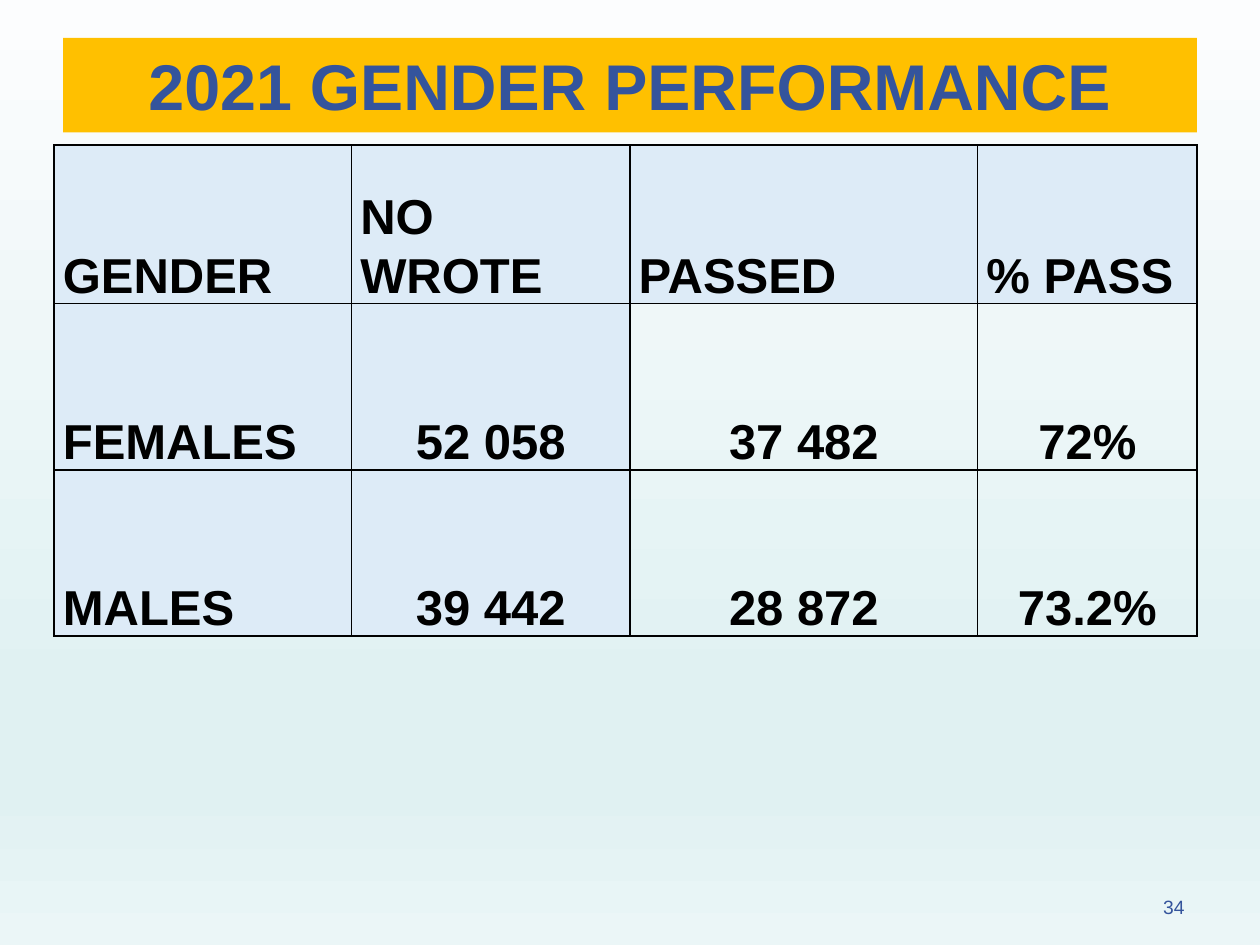
from lxml.etree import SubElement
from pptx import Presentation
from pptx.dml.color import RGBColor
from pptx.enum.text import MSO_ANCHOR as Anchor, MSO_AUTO_SIZE as AutoSize, PP_ALIGN as Align
from pptx.oxml.ns import qn
from pptx.util import Inches, Pt

FONT = "Arial"
BLUE, GOLD, PALE, BLACK = "34549C", "FFC000", "DDEBF7", "000000"
BACKGROUND = [(0, "FCFDFE"), (74, "E0F1F2"), (83, "E0F1F2"), (100, "EBF6F7")]
ROWS = [
    ["GENDER", "NO WROTE", "PASSED", "% PASS"],
    ["FEMALES", "52 058", "37 482", "72%"],
    ["MALES", "39 442", "28 872", "73.2%"],
]
COLUMN_WIDTHS = [2.36, 2.21, 2.76, 1.74]
ROW_HEIGHTS = [1.26, 1.32, 1.32]


def color(value):
    return RGBColor.from_string(value)


def place(shape, left, top, width, height):
    shape.left, shape.top = Inches(left), Inches(top)
    shape.width, shape.height = Inches(width), Inches(height)


def add_borders(cell, line_color, points):
    """Outline a cell; call before filling it, as lines precede the fill in XML."""
    properties = cell._tc.get_or_add_tcPr()
    for side in ("lnL", "lnR", "lnT", "lnB"):
        line = SubElement(properties, qn(f"a:{side}"), w=str(Pt(points)))
        fill = SubElement(line, qn("a:solidFill"))
        SubElement(fill, qn("a:srgbClr"), val=line_color)


class SlideBuilder:
    def __init__(self, page, font):
        self.page = page
        self.font = font

    def background(self, stops):
        fill = self.page.background.fill
        fill.gradient()
        fill.gradient_angle = 270
        stop_list = self.page._element.find(".//" + qn("a:gsLst"))
        stop_list.clear()
        for percent, value in stops:
            stop = SubElement(stop_list, qn("a:gs"), pos=str(percent * 1000))
            SubElement(stop, qn("a:srgbClr"), val=value)

    def add_text(self, frame, text, size, text_color, bold=False, align=Align.LEFT, spacing=1.0):
        para = frame.paragraphs[0]
        para.alignment = align
        para.line_spacing = spacing
        span = para.add_run()
        span.text = text
        span.font.name = self.font
        span.font.size = Pt(size)
        span.font.bold = bold
        span.font.color.rgb = color(text_color)

    def title(self, text, area):
        box = self.page.shapes.title
        place(box, *area)
        box.fill.solid()
        box.fill.fore_color.rgb = color(GOLD)
        frame = box.text_frame
        frame.auto_size = AutoSize.NONE
        frame.vertical_anchor = Anchor.MIDDLE
        self.add_text(frame, text, 36.9, BLUE, bold=True, align=Align.CENTER)

    def page_number(self, text, area):
        box = self.page.shapes.add_textbox(*map(Inches, area))
        box.text_frame.word_wrap = True
        self.add_text(box.text_frame, text, 11, BLUE, align=Align.RIGHT, spacing=0.9)
        box.text_frame.paragraphs[0].space_after = Pt(6)

    def table(self, rows, left, top, widths, heights):
        area = map(Inches, (left, top, sum(widths), sum(heights)))
        table = self.page.shapes.add_table(len(rows), len(widths), *area).table
        table.first_row = table.horz_banding = False
        for column, width in zip(table.columns, widths):
            column.width = Inches(width)
        for row, height in zip(table.rows, heights):
            row.height = Inches(height)
        for i, texts in enumerate(rows):
            for j, text in enumerate(texts):
                is_label = i == 0 or j == 0
                self.cell(table.cell(i, j), text, Align.LEFT if is_label else Align.CENTER,
                          shaded=i == 0 or j < 2)

    def cell(self, cell, text, align, shaded):
        cell.margin_left = cell.margin_right = Inches(0.07)
        cell.margin_top = cell.margin_bottom = 0
        cell.vertical_anchor = Anchor.BOTTOM
        add_borders(cell, BLACK, 1)
        if shaded:
            cell.fill.solid()
            cell.fill.fore_color.rgb = color(PALE)
        else:
            cell.fill.background()
        self.add_text(cell.text_frame, text, 28, BLACK, bold=True, align=align, spacing=1.07)


def main():
    deck = Presentation()
    deck.slide_width, deck.slide_height = Inches(10), Inches(7.5)
    title_only = deck.slide_layouts[5]
    builder = SlideBuilder(deck.slides.add_slide(title_only), FONT)
    builder.background(BACKGROUND)
    builder.title("2021 GENDER PERFORMANCE", (0.5, 0.3, 9, 0.75))
    builder.page_number("34", (7.17, 7.08, 2.33, 0.27))
    builder.table(ROWS, 0.43, 1.15, COLUMN_WIDTHS, ROW_HEIGHTS)
    deck.save("out.pptx")


if __name__ == "__main__":
    main()
